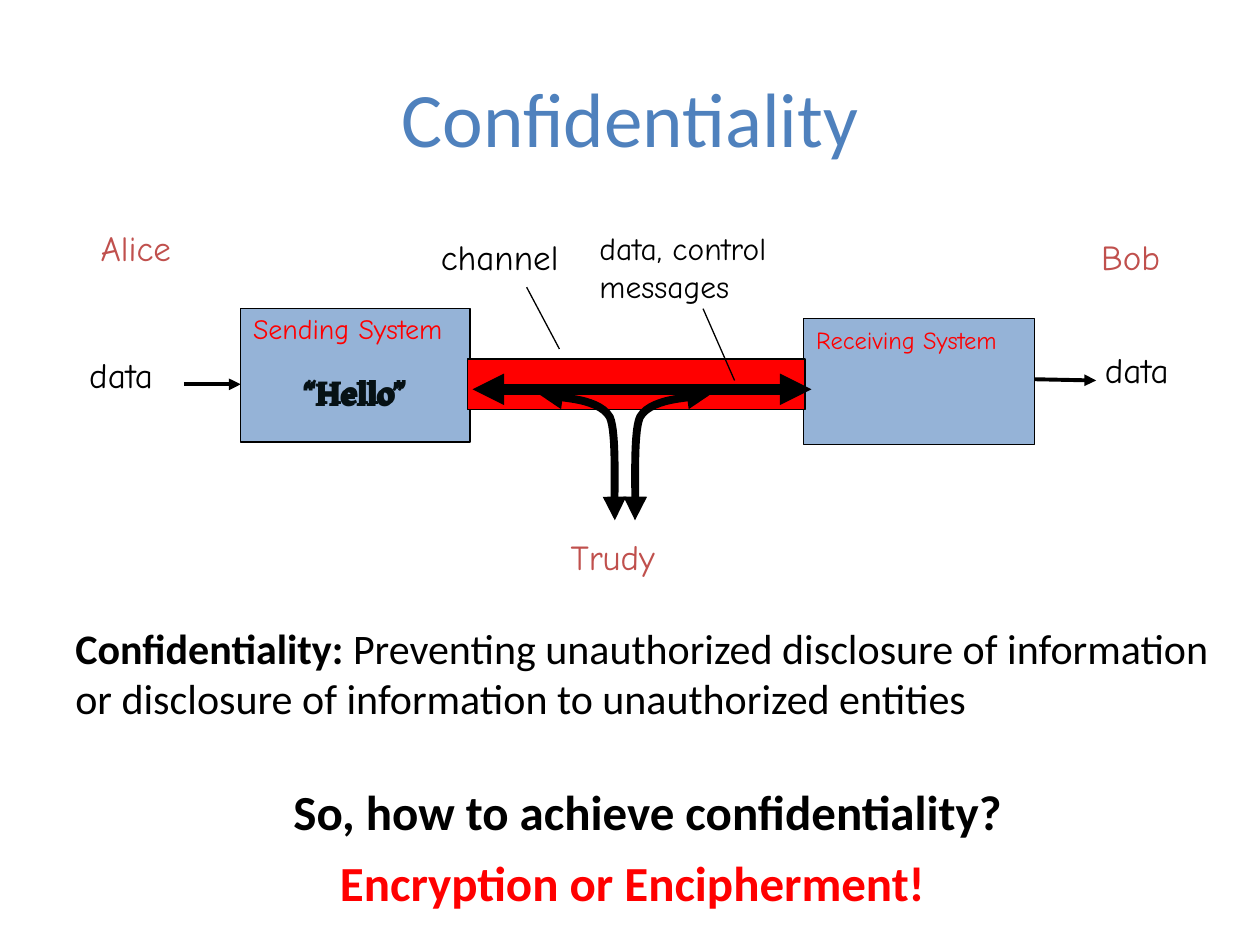
from dataclasses import dataclass

from lxml import etree
from pptx import Presentation
from pptx.dml.color import RGBColor
from pptx.enum.shapes import MSO_CONNECTOR as Connector, MSO_SHAPE as Shape
from pptx.enum.text import MSO_ANCHOR as Anchor, PP_ALIGN as Align
from pptx.oxml.ns import qn
from pptx.util import Inches, Pt


@dataclass(frozen=True)
class Theme:
    title: str = "4F81BD"
    person: str = "C0504D"
    system: str = "95B3D7"
    alert: str = "FF0000"
    black: str = "000000"
    ink: str = "071215"
    body_font: str = "Calibri"
    label_font: str = "Comic Neue"
    message_font: str = "Roboto Slab"
    title_size: int = 44
    question_size: int = 28
    definition_size: int = 24
    label_size: int = 20
    small_size: int = 18
    thin: float = 0.75
    flow: float = 2.25
    tap: float = 4.5
    trunk: float = 6


THEME = Theme()


def rgb(color):
    return RGBColor.from_string(color)


def style(font, name, size, color, bold=False):
    font.name, font.size, font.bold = name, Pt(size), bold
    font.color.rgb = rgb(color)


def style_line(shape, width, start_arrow=False, end_arrow=False):
    shape.line.color.rgb = rgb(THEME.black)
    shape.line.width = Pt(width)
    line = shape.line._get_or_add_ln()
    for tag, wanted in (("a:headEnd", start_arrow), ("a:tailEnd", end_arrow)):
        if wanted:
            etree.SubElement(line, qn(tag), type="triangle")


@dataclass
class Region:
    """An area of the slide; its parts are placed from its top left corner."""
    slide: object
    left: float
    top: float

    def point(self, x, y):
        return Inches(round(self.left + x, 2)), Inches(round(self.top + y, 2))

    def text(self, x, y, width, height, text, size=THEME.label_size,
             color=THEME.black, font=THEME.label_font, bold=False, wrap=False):
        box = self.slide.shapes.add_textbox(
            *self.point(x, y), Inches(width), Inches(height))
        box.text_frame.word_wrap = wrap
        paragraph = box.text_frame.paragraphs[0]
        paragraph.text = text
        style(paragraph.font, font, size, color, bold)
        return paragraph

    def rectangle(self, x, y, width, height, color):
        shape = self.slide.shapes.add_shape(
            Shape.RECTANGLE, *self.point(x, y), Inches(width), Inches(height))
        shape.shadow.inherit = False
        shape.fill.solid()
        shape.fill.fore_color.rgb = rgb(color)
        style_line(shape, THEME.thin)
        return shape

    def line(self, start, end, width=THEME.thin, **arrows):
        connector = self.slide.shapes.add_connector(
            Connector.STRAIGHT, *self.point(*start), *self.point(*end))
        style_line(connector, width, **arrows)
        etree.SubElement(connector._element.spPr, qn("a:effectLst"))


def bezier(start, control1, control2, end, steps=16):
    """Points along a cubic curve, without its first one."""
    for step in range(1, steps + 1):
        t = step / steps
        weights = ((1 - t) ** 3, 3 * t * (1 - t) ** 2, 3 * t * t * (1 - t), t ** 3)
        yield tuple(sum(w * v for w, v in zip(weights, values))
                    for values in zip(start, control1, control2, end))


def add_title(slide, left, top, width, height):
    title = slide.shapes.title
    title.left, title.top = Inches(left), Inches(top)
    title.width, title.height = Inches(width), Inches(height)
    title.text_frame.vertical_anchor = Anchor.MIDDLE
    paragraph = title.text_frame.paragraphs[0]
    paragraph.text = "Confidentiality"
    paragraph.alignment = Align.CENTER
    style(paragraph.font, THEME.body_font, THEME.title_size, THEME.title)


def add_system(region, x, y, width, height, name, size, inset):
    shape = region.rectangle(x, y, width, height, THEME.system)
    frame = shape.text_frame
    frame.vertical_anchor = Anchor.TOP
    frame.margin_top = Inches(inset)
    paragraph = frame.paragraphs[0]
    paragraph.text = name
    paragraph.alignment = Align.LEFT
    style(paragraph.font, THEME.label_font, size, THEME.alert)


def add_tap(region, axis, side):
    """Curved arrow from the channel down to Trudy; side -1 left, 1 right."""
    curve = ((0.68, 0), (0.59, 0.03), (0.22, 0.01), (0.12, 0.18),
             (0.06, 0.31), (0.09, 0.83), (0.08, 1))
    points = [(axis + side * x, 1.38 + y) for x, y in curve]
    path_points = [*bezier(*points[:4]), *bezier(*points[3:])]
    builder = region.slide.shapes.build_freeform(*region.point(*points[0]))
    # Unrounded positions keep the curve smooth
    builder.add_line_segments(
        [(Inches(region.left + x), Inches(region.top + y)) for x, y in path_points],
        close=False)
    shape = builder.convert_to_shape()
    shape.shadow.inherit = False
    shape.fill.background()
    style_line(shape, THEME.tap, start_arrow=True, end_arrow=True)


def add_diagram(slide, left, top):
    region = Region(slide, left, top)

    # Systems and the channel between them
    add_system(region, 1.41, 0.7, 1.82, 1.06, "Sending System", 16, 0.02)
    add_system(region, 5.88, 0.78, 1.83, 1, "Receiving System", 14, 0.05)
    region.rectangle(3.21, 1.1, 2.68, 0.4, THEME.alert)
    region.line((3.25, 1.34), (5.94, 1.34), THEME.trunk,
                start_arrow=True, end_arrow=True)

    # Channel callouts
    region.text(2.9, 0.07, 1.36, 0.5, "channel")
    region.line((3.68, 0.53), (3.94, 1.02))
    region.text(4.16, 0.02, 2.07, 0.7, "data, control messages",
                THEME.small_size, wrap=True)
    region.line((5.08, 0.7), (5.33, 1.27))

    # Eavesdropping
    for side in (-1, 1):
        add_tap(region, 4.46, side)

    # Data in and out
    region.line((0.96, 1.3), (1.41, 1.3), THEME.flow, end_arrow=True)
    region.line((7.71, 1.26), (8.2, 1.27), THEME.flow, end_arrow=True)
    for x, y in ((0.11, 1.01), (8.17, 0.97)):
        region.text(x, y, 0.89, 0.5, "data")

    # People
    for name, x, y, width in (("Alice", 0.2, 0, 0.98), ("Bob", 8.14, 0.07, 0.78),
                              ("Trudy", 3.93, 2.45, 1.13)):
        region.text(x, y, width, 0.5, name, color=THEME.person)

    # Message, doubled with a slight offset
    for x, y in ((1.8, 1.18), (1.82, 1.16)):
        region.text(x, y, 1.16, 0.4, "“Hello”", THEME.small_size,
                    THEME.ink, THEME.message_font, bold=True)


def add_statements(slide, left, top):
    region = Region(slide, left, top)
    definition = region.text(0, 0, 9.23, 0.91, "Confidentiality: ",
                             THEME.definition_size, font=THEME.body_font, wrap=True)
    definition.runs[0].font.bold = True
    definition.add_run().text = (
        "Preventing unauthorized disclosure of information "
        "or disclosure of information to unauthorized entities")
    region.text(1.73, 1.26, 5.89, 0.57, "So, how to achieve confidentiality?",
                THEME.question_size, font=THEME.body_font, bold=True)
    region.text(2.1, 1.83, 4.9, 0.57, "Encryption or Encipherment!",
                THEME.question_size, THEME.alert, THEME.body_font, bold=True)


def main():
    presentation = Presentation()
    presentation.slide_width, presentation.slide_height = Inches(10), Inches(7.5)
    slide = presentation.slides.add_slide(presentation.slide_layouts[5])
    add_title(slide, 0.5, 0.3, 9, 1.25)
    add_diagram(slide, 0.5, 1.75)
    add_statements(slide, 0.5, 4.89)
    presentation.save("out.pptx")


if __name__ == "__main__":
    main()
